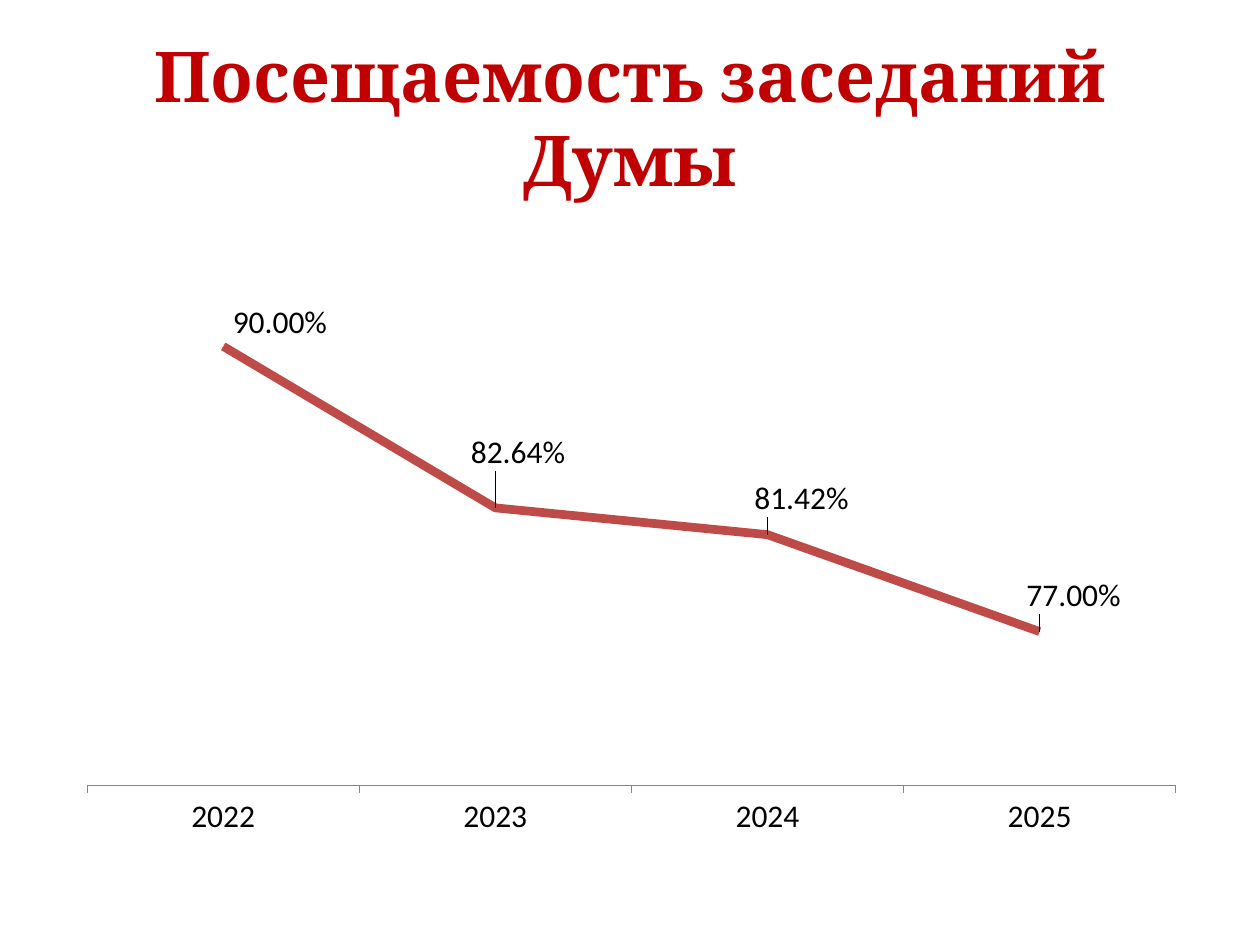
from lxml import etree
from pptx import Presentation
from pptx.chart.data import CategoryChartData
from pptx.dml.color import RGBColor
from pptx.enum.chart import XL_CHART_TYPE, XL_LABEL_POSITION, XL_TICK_MARK
from pptx.enum.text import MSO_ANCHOR, PP_ALIGN
from pptx.oxml.ns import qn
from pptx.util import Cm, Pt

LINE = XL_CHART_TYPE.LINE
ABOVE = XL_LABEL_POSITION.ABOVE
OUT = XL_TICK_MARK.OUTSIDE
MID = MSO_ANCHOR.MIDDLE
CENTER = PP_ALIGN.CENTER

TITLE = "Посещаемость заседаний Думы"
SERIES = "Series 1"
YEARS = ["2022", "2023", "2024", "2025"]
RATES = [0.9, 0.8264, 0.8142, 0.77]
SHIFTS = [(0.05, 0), (0.02, -0.05), (0.03, -0.02), (0.03, -0.02)]
PLOT = {"x": 0.02, "y": 0.02, "w": 0.96, "h": 0.88}
COLORS = {"title": "C00000", "line": "BE4B48", "axis": "868686", "text": "000000"}


def style(font, name, size, color, bold=False):
    font.name = name
    font.size = Pt(size)
    font.bold = bold
    font.color.rgb = RGBColor.from_string(COLORS[color])


def write(box, text, font="Cambria", size=40, color="title", bold=True):
    frame = box.text_frame
    frame.word_wrap = True
    frame.vertical_anchor = MID
    para = frame.paragraphs[0]
    para.alignment = CENTER
    run = para.add_run()
    run.text = text
    style(run.font, font, size, color, bold)


def stroke(line, color, width):
    line.color.rgb = RGBColor.from_string(COLORS[color])
    line.width = Pt(width)


def layout(modes, sizes):
    node = etree.Element(qn("c:layout"))
    manual = etree.SubElement(node, qn("c:manualLayout"))
    for tag, val in [*modes.items(), *sizes.items()]:
        etree.SubElement(manual, qn(f"c:{tag}")).set("val", str(val))
    return node


def draw(slide):
    data = CategoryChartData(number_format="0.00%")
    data.categories = YEARS
    data.add_series(SERIES, RATES)
    frame = slide.shapes.add_chart(LINE, Cm(1.3), Cm(4.52), Cm(22.86), Cm(12.57), data)
    chart = frame.chart
    chart.has_legend = False
    chart.has_title = False
    style(chart.font, "Calibri", 18, "text")

    axis = chart.value_axis
    axis.minimum_scale, axis.maximum_scale = 0.7, 0.95
    axis.has_major_gridlines = False
    axis.visible = False
    base = chart.category_axis
    base.major_tick_mark = OUT
    stroke(base.format.line, "axis", 0.75)

    plot = chart.plots[0]
    plot.vary_by_categories = False
    area = chart._chartSpace.chart.plotArea
    for old in area.findall(qn("c:layout")):
        area.remove(old)
    modes = {"layoutTarget": "inner", "xMode": "edge", "yMode": "edge"}
    area.insert(0, layout(modes, PLOT))

    line = plot.series[0]
    line.smooth = False
    stroke(line.format.line, "line", 5)
    labels = line.data_labels
    labels.show_value = True
    labels.number_format = "0.00%"
    labels.number_format_is_linked = False
    labels.position = ABOVE
    for i in range(len(SHIFTS)):
        line.points[i].data_label.position = ABOVE
    for label, (x, y) in zip(line._element.iter(qn("c:dLbl")), SHIFTS):
        label.insert(1, layout({}, {"x": x, "y": y}))


def main():
    deck = Presentation()
    deck.slide_width, deck.slide_height = Cm(25.4), Cm(19.05)
    slide = deck.slides.add_slide(deck.slide_layouts[5])
    title = slide.shapes.title
    title.left, title.top = Cm(1.27), Cm(0.76)
    title.width, title.height = Cm(22.86), Cm(3.18)
    write(title, TITLE)
    draw(slide)
    deck.save("out.pptx")


if __name__ == "__main__":
    main()
